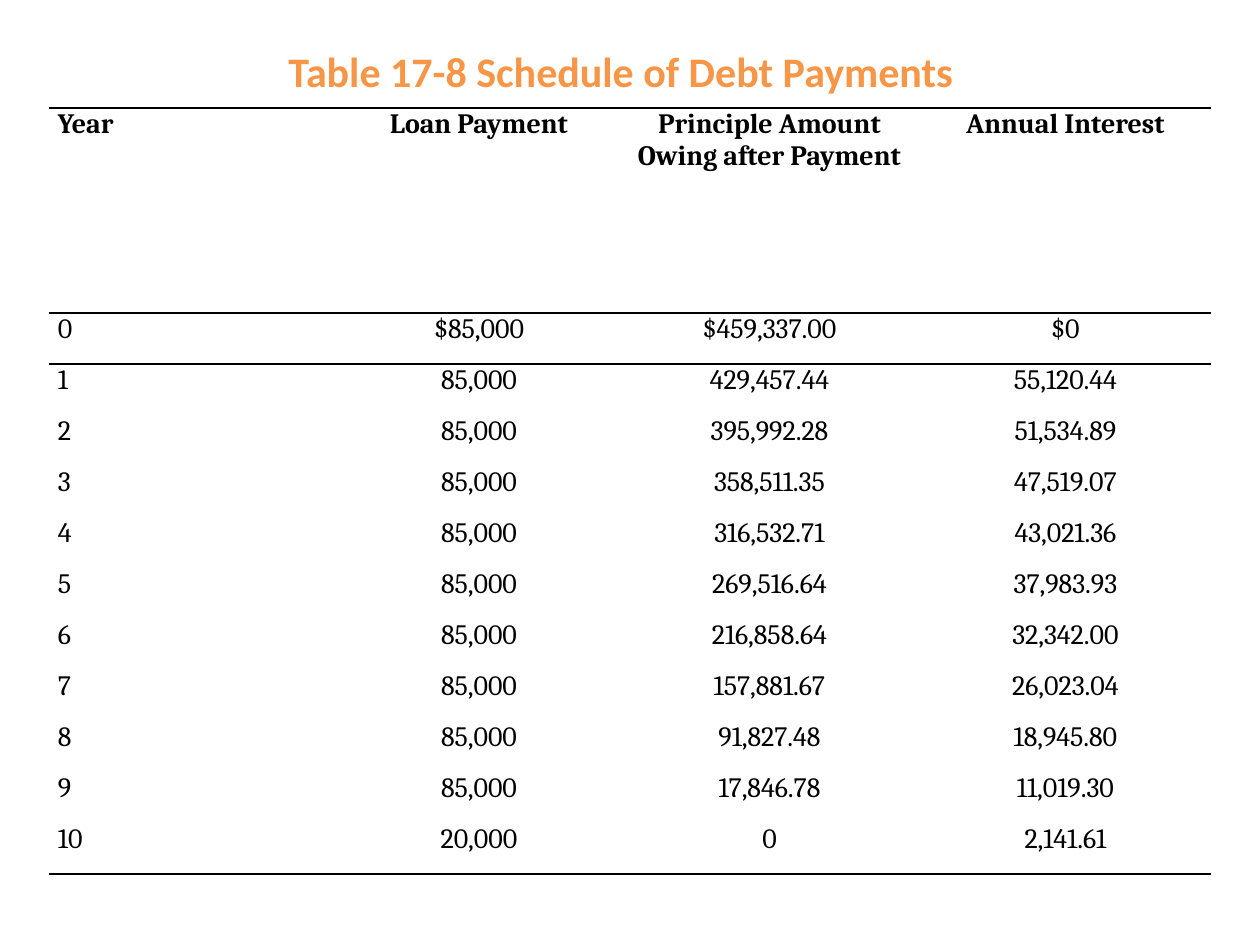
from dataclasses import dataclass

from lxml.etree import SubElement
from pptx import Presentation
from pptx.dml.color import RGBColor
from pptx.enum.text import MSO_AUTO_SIZE, PP_ALIGN
from pptx.oxml.ns import qn
from pptx.slide import Slide
from pptx.table import _Cell
from pptx.util import Emu, Pt

PX_PER_INCH = 126
ORANGE = RGBColor(0xF7, 0x96, 0x46)
BLACK = RGBColor(0x00, 0x00, 0x00)
PLAIN_TABLE_STYLE = "{2D5ABB26-0587-4C30-8999-92F81FD0307C}"

COLUMN_WIDTHS = (290, 280, 301, 291)
HEADER_HEIGHT = 205
ROW_HEIGHT = 51
CELL_INSET = 9
HEADER = ("Year", "Loan Payment", "Principle Amount Owing after Payment", "Annual Interest")


@dataclass(frozen=True)
class Payment:
    year: str
    amount: str
    principal: str
    interest: str

    def texts(self) -> tuple[str, ...]:
        return self.year, self.amount, self.principal, self.interest


PAYMENTS = (
    Payment("0", "$85,000", "$459,337.00", "$0"),
    Payment("1", "85,000", "429,457.44", "55,120.44"),
    Payment("2", "85,000", "395,992.28", "51,534.89"),
    Payment("3", "85,000", "358,511.35", "47,519.07"),
    Payment("4", "85,000", "316,532.71", "43,021.36"),
    Payment("5", "85,000", "269,516.64", "37,983.93"),
    Payment("6", "85,000", "216,858.64", "32,342.00"),
    Payment("7", "85,000", "157,881.67", "26,023.04"),
    Payment("8", "85,000", "91,827.48", "18,945.80"),
    Payment("9", "85,000", "17,846.78", "11,019.30"),
    Payment("10", "20,000", "0", "2,141.61"),
)


def px(length: int) -> Emu:
    return Emu(round(length * 914400 / PX_PER_INCH))


def add_span(para, text: str, font: str, size: int, color: RGBColor, bold: bool) -> None:
    span = para.add_run()
    span.text = text
    span.font.name = font
    span.font.size = Pt(size)
    span.font.bold = bold
    span.font.color.rgb = color


def add_title(page: Slide) -> None:
    box = page.shapes.add_textbox(px(276), px(39), px(697), px(63))
    box.text_frame.word_wrap = False
    box.text_frame.auto_size = MSO_AUTO_SIZE.SHAPE_TO_FIT_TEXT
    add_span(box.text_frame.paragraphs[0], "Table 17-8 Schedule of Debt Payments",
             "Calibri", 24, ORANGE, True)


def add_border(cell: _Cell, side: str) -> None:
    line = SubElement(cell._tc.get_or_add_tcPr(), qn(f"a:{side}"), w=str(Pt(1)))
    fill = SubElement(line, qn("a:solidFill"))
    SubElement(fill, qn("a:srgbClr"), val=str(BLACK))


def fill_cell(cell: _Cell, text: str, align: PP_ALIGN, bold: bool, borders: tuple[str, ...]) -> None:
    cell.margin_left = cell.margin_right = px(CELL_INSET)
    cell.margin_top = cell.margin_bottom = 0
    for side in borders:
        add_border(cell, side)
    cell.fill.background()
    para = cell.text_frame.paragraphs[0]
    para.alignment = align
    add_span(para, text, "Cambria", 16, BLACK, bold)


def add_schedule(page: Slide) -> None:
    rows = (HEADER, *(payment.texts() for payment in PAYMENTS))
    height = HEADER_HEIGHT + ROW_HEIGHT * len(PAYMENTS)
    frame = page.shapes.add_table(len(rows), len(HEADER), px(49), px(108),
                                  px(sum(COLUMN_WIDTHS)), px(height))
    table = frame.table
    table.horz_banding = False
    table._tbl.tblPr.find(qn("a:tableStyleId")).text = PLAIN_TABLE_STYLE
    for column, width in zip(table.columns, COLUMN_WIDTHS):
        column.width = px(width)

    # Rules run above and below the header and under the last row
    borders = {0: ("lnT", "lnB"), 1: ("lnT",), len(rows) - 1: ("lnB",)}
    for r, texts in enumerate(rows):
        table.rows[r].height = px(ROW_HEIGHT if r else HEADER_HEIGHT)
        for c, text in enumerate(texts):
            align = PP_ALIGN.CENTER if c else PP_ALIGN.LEFT
            fill_cell(table.cell(r, c), text, align, r == 0, borders.get(r, ()))


def main() -> None:
    deck = Presentation()
    deck.slide_width, deck.slide_height = px(1260), px(945)
    page = deck.slides.add_slide(deck.slide_layouts[6])
    add_title(page)
    add_schedule(page)
    deck.save("out.pptx")


if __name__ == "__main__":
    main()
